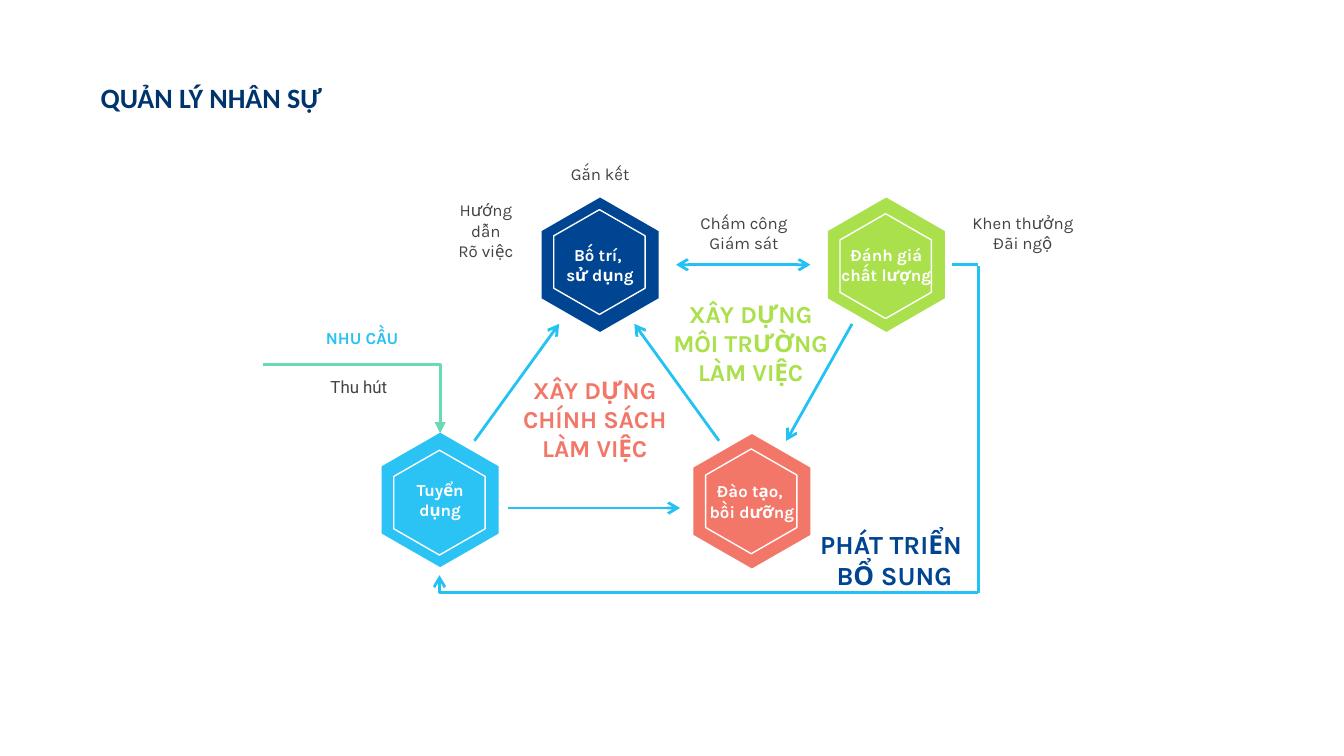
"""Build the staff management cycle slide."""
import pptx
import pptx.util
import pptx.dml.color
import pptx.enum.shapes
import pptx.enum.text
import pptx.oxml.ns
from lxml import etree

Inches = pptx.util.Inches
Pt = pptx.util.Pt
RGB = pptx.dml.color.RGBColor
ALIGN = pptx.enum.text.PP_ALIGN
ANCHOR = pptx.enum.text.MSO_ANCHOR
KIND = pptx.enum.shapes.MSO_CONNECTOR
qn = pptx.oxml.ns.qn

TITLE = RGB(0x00, 0x34, 0x6D)
SKY = RGB(0x2A, 0xC3, 0xF3)
NAVY = RGB(0x00, 0x45, 0x91)
CORAL = RGB(0xF3, 0x77, 0x68)
LIME = RGB(0xA9, 0xE0, 0x4B)
MINT = RGB(0x6B, 0xD8, 0xB6)
LINE = RGB(0x24, 0xC1, 0xF3)
GREY = RGB(0x43, 0x43, 0x43)
WHITE = RGB(0xFF, 0xFF, 0xFF)

STEPS = [
    (2.84, 3.22, 3.35, SKY, ["Tuyển dụng"], 0.1),
    (4.03, 1.47, 1.56, NAVY, ["Bố trí, ", "sử dụng"], 0.05),
    (5.16, 3.23, 3.34, CORAL, ["Đào tạo, ", "bồi dưỡng"], 0.05),
    (6.16, 1.47, 1.59, LIME, ["Đánh giá chất lượng"], 0.05),
]
LABELS = [
    (1.98, 2.28, 1.43, 0.47, ["NHU CẦU"], 9, SKY, True, "Karla"),
    (2.28, 2.78, 0.78, 0.2, ["Thu hút"], 9, GREY, False, "Roboto"),
    (5.94, 3.93, 1.43, 0.47, ["PHÁT TRIỂN ", "BỔ SUNG"], 14, NAVY, True, "Karla"),
    (4.77, 1.5, 1.53, 0.47, ["Chấm công", "Giám sát"], 9, GREY, False, "Karla"),
    (3.71, 2.88, 1.43, 0.47, ["XÂY DỰNG CHÍNH SÁCH LÀM VIỆC"], 13, CORAL, True, "Karla"),
    (7.08, 1.5, 1.06, 0.47, ["Khen thưởng", "Đãi ngộ"], 9, GREY, False, "Karla"),
    (4.87, 2.22, 1.43, 0.66, ["XÂY DỰNG MÔI TRƯỜNG LÀM VIỆC"], 13, LIME, True, "Karla"),
    (3.21, 1.48, 0.81, 0.47, ["Hướng dẫn", "Rõ việc"], 9, GREY, False, "Karla"),
    (4.06, 1.06, 0.81, 0.47, ["Gắn kết"], 9, GREY, False, "Karla"),
]
FLOWS = [
    (3.78, 3.78, 5.06, 3.78, ["tailEnd"]),
    (3.53, 3.28, 4.16, 2.41, ["tailEnd"]),
    (5.35, 3.28, 4.72, 2.41, ["tailEnd"]),
    (6.34, 2.41, 5.85, 3.28, ["tailEnd"]),
    (5.03, 1.97, 6.03, 1.97, ["headEnd", "tailEnd"]),
    (7.28, 1.98, 7.28, 4.41, []),
    (7.28, 4.41, 3.27, 4.41, []),
    (3.27, 4.41, 3.27, 4.28, ["tailEnd"]),
    (7.08, 1.97, 7.28, 1.97, []),
]


def write(shape, lines, size, color, bold=True, face="Karla", inset=0.1,
          align=ALIGN.CENTER, anchor=ANCHOR.MIDDLE, space=None):
    """Fill a shape with one paragraph for each line."""
    frame = shape.text_frame
    frame.word_wrap = True
    frame.vertical_anchor = anchor
    frame.margin_left = frame.margin_right = Inches(inset)
    frame.margin_top = frame.margin_bottom = Inches(inset)
    for index, line in enumerate(lines):
        para = frame.add_paragraph() if index else frame.paragraphs[0]
        para.text = line
        para.alignment = align
        para.line_spacing = space
        font = para.font
        font.name, font.size, font.bold = face, Pt(size), bold
        font.color.rgb = color


def label(slide, left, top, width, height, lines, size, color, bold, face, **style):
    """Add a text box."""
    box = slide.shapes.add_textbox(*map(Inches, (left, top, width, height)))
    write(box, lines, size, color, bold, face, **style)


def hexa(slide, left, top, width, height):
    """Add an upright hexagon with neither fill nor line."""
    mid, right = left + width / 2, left + width
    high, low = top + height / 4, top + height * 3 / 4
    points = [(left, high), (left, low), (mid, top + height),
              (right, low), (right, high)]
    form = slide.shapes.build_freeform(Inches(mid), Inches(top))
    form.add_line_segments([(Inches(x), Inches(y)) for x, y in points])
    shape = form.convert_to_shape()
    shape.shadow.inherit = False
    shape.fill.background()
    shape.line.fill.background()
    return shape


def step(slide, left, top, inner, color, lines, inset):
    """Add a coloured hexagon with its text and white inner outline."""
    body = hexa(slide, left, top, 0.87, 1)
    body.fill.solid()
    body.fill.fore_color.rgb = color
    write(body, lines, 9, WHITE, inset=inset)
    ring = hexa(slide, left + 0.09, inner, 0.68, 0.78)
    ring.line.color.rgb = WHITE
    ring.line.width = Pt(0.75)


def link(slide, x1, y1, x2, y2, ends, color=LINE, tip="arrow", kind=KIND.STRAIGHT):
    """Add a connector with arrowheads at the named ends."""
    line = slide.shapes.add_connector(kind, *map(Inches, (x1, y1, x2, y2)))
    line.line.color.rgb = color
    line.line.width = Pt(1.5)
    stroke = line.line._get_or_add_ln()
    for end in ends:
        etree.SubElement(stroke, qn("a:" + end), type=tip)
    etree.SubElement(line._element.spPr, qn("a:effectLst"))
    return line


def elbow(slide):
    """Add the bent arrow that leads into the first step."""
    line = link(slide, 2.36, 3.63, 2.87, 2.31, ["headEnd"], MINT, "triangle", KIND.ELBOW)
    props = line._element.spPr
    props.find(qn("a:xfrm")).set("rot", str(270 * 60000))
    props.find(qn("a:prstGeom")).set("prst", "bentConnector2")


def main():
    """Build and save the slide in the 16:9 format."""
    deck = pptx.Presentation()
    deck.slide_width = Inches(10)
    deck.slide_height = Inches(10 * 9 / 16)
    slide = deck.slides.add_slide(deck.slide_layouts[6])
    label(slide, 0.75, 0.48, 2.16, 0.37, ["QUẢN LÝ NHÂN SỰ"], 15, TITLE, True, "Calibri",
          inset=0, align=ALIGN.LEFT, anchor=ANCHOR.BOTTOM, space=0.9)
    for item in STEPS:
        step(slide, *item)
    for item in LABELS:
        label(slide, *item)
    elbow(slide)
    for item in FLOWS:
        link(slide, *item)
    deck.save("out.pptx")


if __name__ == "__main__":
    main()
